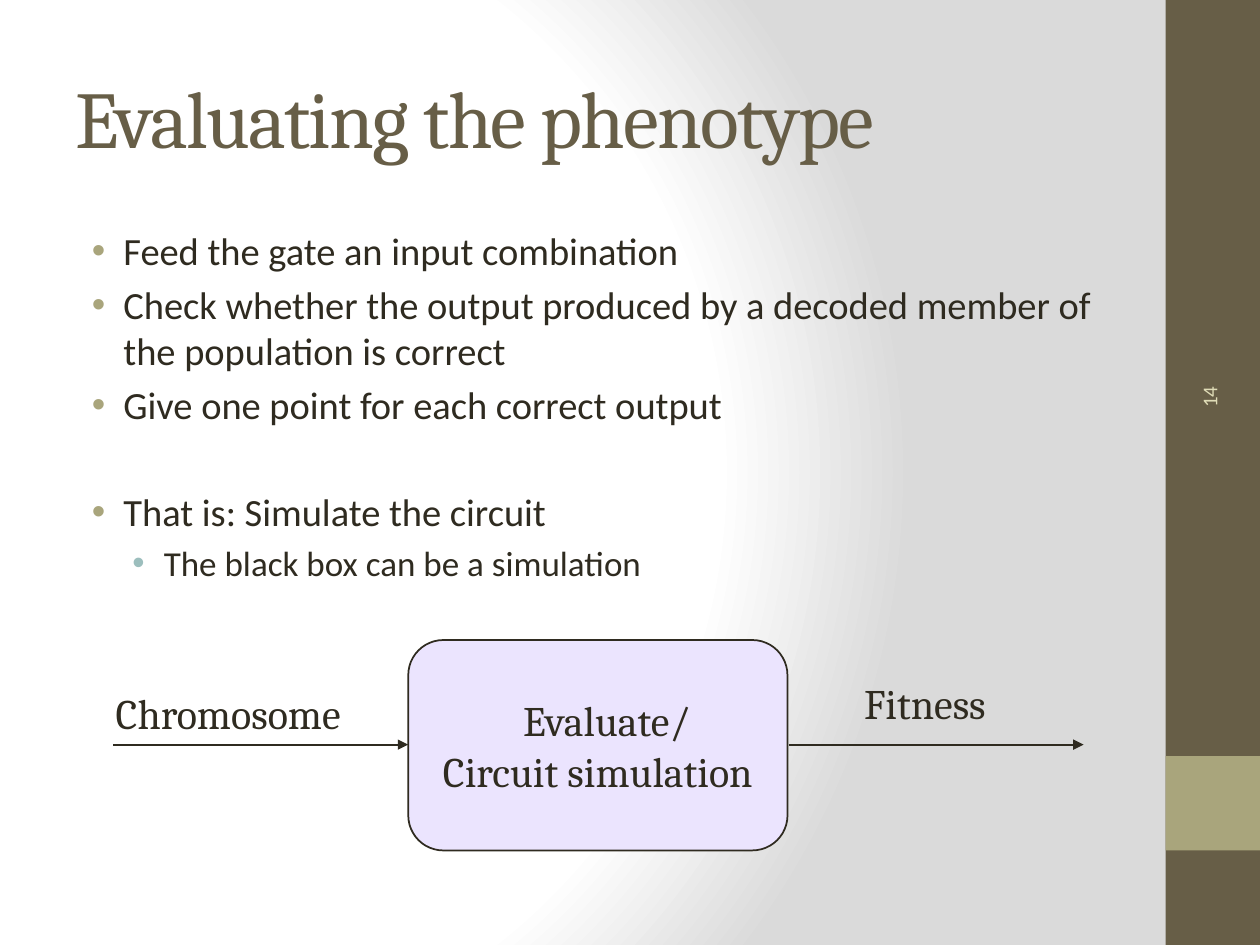
from lxml import etree
from pptx import Presentation
from pptx.dml.color import RGBColor
from pptx.enum import shapes, text
from pptx.oxml import parse_xml
from pptx.oxml.ns import nsdecls, qn
from pptx.util import Inches, Pt

BROWN = RGBColor(0x67, 0x5E, 0x47)
OLIVE = RGBColor(0xA9, 0xA5, 0x7C)
CREAM = RGBColor(0xDF, 0xDC, 0xB7)
TEAL = RGBColor(0x9C, 0xBE, 0xBD)
INK = RGBColor(0x2F, 0x2B, 0x20)
LILAC = RGBColor(0xEB, 0xE4, 0xFE)
LEFT, MID = text.PP_ALIGN.LEFT, text.PP_ALIGN.CENTER


def write(par, words, size=24, font="Cambria", color=INK, align=LEFT,
          before=0, indent=0, hang=0, bullet=None, track=0):
    """Fill one paragraph with a formatted run."""
    run = par.add_run()
    run.text = words
    run.font.size, run.font.name = Pt(size), font
    run.font.color.rgb = color
    if track:
        run.font._element.set("spc", str(track * 100))
    par.alignment, par.space_before = align, Pt(before)
    props = par._p.get_or_add_pPr()
    props.set("marL", str(Inches(indent)))
    props.set("indent", str(Inches(hang)))
    if bullet:
        tint = etree.SubElement(props, qn("a:buClr"))
        etree.SubElement(tint, qn("a:srgbClr"), val=str(bullet))
        etree.SubElement(props, qn("a:buFont"), typeface="Arial")
        etree.SubElement(props, qn("a:buChar"), char="•")


def place(shape, left, top, width, height):
    shape.left, shape.top = Inches(left), Inches(top)
    shape.width, shape.height = Inches(width), Inches(height)


deck = Presentation()
deck.slide_width, deck.slide_height = Inches(10), Inches(7.5)
slide = deck.slides.add_slide(deck.slide_layouts[1])
items = slide.shapes

# Background: radial fade from white to grey
stops = "".join(f'<a:gs pos="{pos}000"><a:srgbClr val="{tone}"/></a:gs>'
                for pos, tone in ((0, "FFFFFF"), (75, "FFFFFF"), (100, "DADADA")))
slide.element.cSld.insert(0, parse_xml(
    f'<p:bg {nsdecls("p", "a")}><p:bgPr><a:gradFill rotWithShape="1">'
    f'<a:gsLst>{stops}</a:gsLst><a:path path="circle">'
    '<a:fillToRect l="20000" t="50000" r="100000" b="50000"/></a:path>'
    '</a:gradFill><a:effectLst/></p:bgPr></p:bg>'))

# Side band
for top, high, color in ((0, 7.5, BROWN), (6, 0.75, OLIVE)):
    band = items.add_shape(shapes.MSO_SHAPE.RECTANGLE, Inches(9.25),
                           Inches(top), Inches(0.75), Inches(high))
    band.shadow.inherit = False
    band.fill.solid()
    band.fill.fore_color.rgb = color
    band.line.fill.background()

# Slide number, read upwards
num = items.add_textbox(Inches(8.26), Inches(1.8), Inches(2.67), Inches(0.4))
num.rotation = 270
num.text_frame.word_wrap = True
num.text_frame.vertical_anchor = text.MSO_ANCHOR.MIDDLE
write(num.text_frame.paragraphs[0], "14", size=12, font="Calibri", color=CREAM)

# Title
title = items.title
place(title, 0.5, 0.3, 8.33, 1.25)
title.text_frame.vertical_anchor = text.MSO_ANCHOR.MIDDLE
write(title.text_frame.paragraphs[0], "Evaluating the phenotype",
      size=46, color=BROWN, track=-1)

# Bullet list: words, level, space before
body = slide.placeholders[1]
place(body, 0.5, 1.75, 8.33, 5.25)
frame = body.text_frame
frame.auto_size = text.MSO_AUTO_SIZE.NONE
points = (
    ("Feed the gate an input combination", 0, 4.4),
    ("Check whether the output produced by a decoded member of "
     "the population is correct", 0, 4.4),
    ("Give one point for each correct output", 0, 4.4),
    ("That is: Simulate the circuit", 0, 35),
    ("The black box can be a simulation", 1, 4),
)
for i, (words, level, gap) in enumerate(points):
    par = frame.add_paragraph() if i else frame.paragraphs[0]
    par.level = level
    write(par, words, size=(22, 20)[level], font="Calibri", before=gap,
          indent=(0.38, 0.7)[level], hang=-0.25, bullet=(OLIVE, TEAL)[level])

# Black box
box = items.add_shape(shapes.MSO_SHAPE.ROUNDED_RECTANGLE, Inches(3.24),
                      Inches(5.08), Inches(3.01), Inches(1.67))
box.shadow.inherit = False
box.fill.solid()
box.fill.fore_color.rgb = LILAC
box.line.color.rgb, box.line.width = INK, Pt(1)
frame = box.text_frame
frame.word_wrap = True
frame.vertical_anchor = text.MSO_ANCHOR.MIDDLE
write(frame.paragraphs[0], "Evaluate/", align=MID, indent=0.14)
write(frame.add_paragraph(), "Circuit simulation", align=MID)

# Arrows into and out of the box
for start in (0.9, 6.26):
    arrow = items.add_connector(shapes.MSO_CONNECTOR.STRAIGHT, Inches(start),
                                Inches(5.91), Inches(start + 2.34), Inches(5.91))
    arrow.line.color.rgb, arrow.line.width = INK, Pt(1)
    etree.SubElement(arrow.line._get_or_add_ln(), qn("a:tailEnd"), type="triangle")
    etree.SubElement(arrow._element.spPr, qn("a:effectLst"))

# Arrow labels
for words, left, top, width in (("Chromosome", 0.82, 5.41, 2.18),
                                ("Fitness", 6.76, 5.33, 1.49)):
    label = items.add_textbox(Inches(left), Inches(top), Inches(width), Inches(0.51))
    label.text_frame.word_wrap = True
    write(label.text_frame.paragraphs[0], words)

deck.save("out.pptx")
